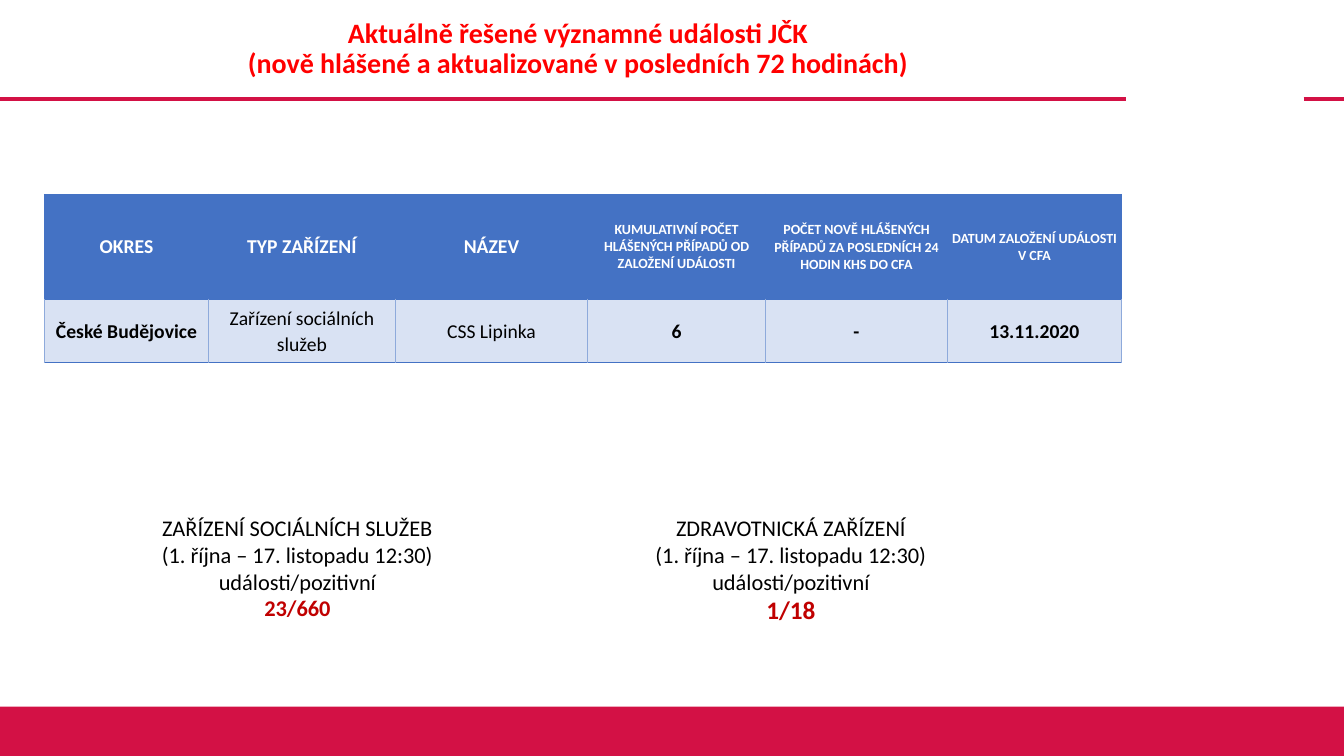
from dataclasses import dataclass

from lxml.etree import SubElement
from pptx import Presentation
from pptx.dml.color import RGBColor
from pptx.enum.shapes import MSO_CONNECTOR, MSO_SHAPE
from pptx.enum.text import MSO_ANCHOR, MSO_AUTO_SIZE, PP_ALIGN
from pptx.oxml.ns import qn
from pptx.util import Inches, Pt


@dataclass(frozen=True)
class Theme:
    font: str = "Calibri"
    crimson: str = "D31145"
    title_red: str = "FF0000"
    count_red: str = "C00000"
    header_blue: str = "4472C4"
    grid_blue: str = "8EAADB"
    row_blue: str = "D9E2F3"
    black: str = "000000"
    white: str = "FFFFFF"
    title_size: int = 20
    count_size: int = 18
    body_size: int = 16
    table_size: int = 14
    small_size: int = 10


def format_text(paragraph, text, *, font, size, color, bold=False, spacing=1.0):
    paragraph.text = text
    paragraph.alignment = PP_ALIGN.CENTER
    paragraph.line_spacing = spacing
    for run in paragraph.runs:
        run.font.name = font
        run.font.size = Pt(size)
        run.font.bold = bold
        run.font.color.rgb = RGBColor.from_string(color)


def set_borders(cell, side_color, edge_color):
    properties = cell._tc.get_or_add_tcPr()
    sides = {"L": side_color, "R": side_color, "T": edge_color, "B": edge_color}
    for side, color in sides.items():
        line = SubElement(properties, qn(f"a:ln{side}"), w=str(Pt(1)))
        fill = SubElement(line, qn("a:solidFill"))
        SubElement(fill, qn("a:srgbClr"), val=color)


class SlideBuilder:
    def __init__(self, slide, theme):
        self.slide = slide
        self.theme = theme

    def text(self, paragraph, text, **options):
        format_text(paragraph, text, font=self.theme.font, **options)

    def rule(self, start, end, top):
        connector = self.slide.shapes.add_connector(
            MSO_CONNECTOR.STRAIGHT, Inches(start), Inches(top), Inches(end), Inches(top))
        connector.line.color.rgb = RGBColor.from_string(self.theme.crimson)
        connector.line.width = Pt(3)
        SubElement(connector._element.spPr, qn("a:effectLst"))

    def band(self, *box):
        shape = self.slide.shapes.add_shape(MSO_SHAPE.RECTANGLE, *map(Inches, box))
        shape.shadow.inherit = False
        shape.fill.solid()
        shape.fill.fore_color.rgb = RGBColor.from_string(self.theme.crimson)
        shape.line.fill.background()

    def title(self, text, *box):
        shape = self.slide.shapes.title
        shape.left, shape.top, shape.width, shape.height = map(Inches, box)
        frame = shape.text_frame
        frame.auto_size = MSO_AUTO_SIZE.NONE
        frame.word_wrap = True
        frame.vertical_anchor = MSO_ANCHOR.MIDDLE
        self.text(frame.paragraphs[0], text, size=self.theme.title_size,
                  color=self.theme.title_red, bold=True, spacing=0.9)

    def cell(self, cell, text, *, fill, side_color, margin, **options):
        cell.vertical_anchor = MSO_ANCHOR.MIDDLE
        cell.margin_left = cell.margin_right = Inches(margin)
        cell.margin_top = cell.margin_bottom = 0
        self.text(cell.text_frame.paragraphs[0], text, **options)
        set_borders(cell, side_color, self.theme.header_blue)
        cell.fill.solid()
        cell.fill.fore_color.rgb = RGBColor.from_string(fill)

    def events_table(self, columns, heights, *box):
        theme = self.theme
        table = self.slide.shapes.add_table(
            len(heights), len(columns), *map(Inches, box)).table
        for row, height in zip(table.rows, heights):
            row.height = Inches(height)
        for index, (width, heading, size, spacing, value, bold) in enumerate(columns):
            table.columns[index].width = Inches(width)
            self.cell(table.cell(0, index), heading, fill=theme.header_blue,
                      side_color=theme.header_blue, margin=0.01, size=size,
                      color=theme.white, bold=True, spacing=spacing)
            self.cell(table.cell(1, index), value, fill=theme.row_blue,
                      side_color=theme.grid_blue, margin=0.07, size=theme.table_size,
                      color=theme.black, bold=bold, spacing=1.07)

    def summary(self, facility, count, count_size, wrap, *box):
        theme = self.theme
        frame = self.slide.shapes.add_textbox(*map(Inches, box)).text_frame
        frame.word_wrap = wrap
        frame.auto_size = MSO_AUTO_SIZE.SHAPE_TO_FIT_TEXT
        lines = (facility, "(1. října – 17. listopadu 12:30)", "události/pozitivní")
        paragraph = frame.paragraphs[0]
        for line in lines:
            self.text(paragraph, line, size=theme.body_size, color=theme.black)
            paragraph = frame.add_paragraph()
        self.text(paragraph, count, size=count_size, color=theme.count_red, bold=True)


def main():
    presentation = Presentation()
    presentation.slide_width = Inches(13.33)
    presentation.slide_height = Inches(7.5)
    slide = presentation.slides.add_slide(presentation.slide_layouts[5])
    theme = Theme()
    builder = SlideBuilder(slide, theme)

    builder.rule(0, 11.17, 0.98)
    builder.rule(12.93, 13.33, 0.98)
    builder.band(0, 7.01, 13.33, 0.49)
    builder.title("Aktuálně řešené významné události JČK \v"
                  "(nově hlášené a aktualizované v posledních 72 hodinách) ",
                  0.36, 0, 10.81, 0.98)

    large, small = theme.table_size, theme.small_size
    columns = [
        (1.63, "OKRES", large, 1.0, "České Budějovice", True),
        (1.85, "TYP ZAŘÍZENÍ", large, 1.0, "Zařízení sociálních služeb", False),
        (1.91, "NÁZEV", large, 1.0, "CSS Lipinka", False),
        (1.76, "KUMULATIVNÍ POČET HLÁŠENÝCH PŘÍPADŮ OD ZALOŽENÍ UDÁLOSTI",
         small, 1.0, "6", True),
        (1.81, "POČET NOVĚ HLÁŠENÝCH PŘÍPADŮ ZA POSLEDNÍCH 24 HODIN KHS DO CFA",
         small, 1.05, "-", True),
        (1.72, "DATUM ZALOŽENÍ UDÁLOSTI V CFA", small, 1.0, "13.11.2020", True),
    ]
    builder.events_table(columns, (1.04, 0.63), 0.44, 1.93, 10.67, 1.67)

    builder.summary("ZAŘÍZENÍ SOCIÁLNÍCH SLUŽEB", "23/660", theme.body_size, False,
                    1.45, 5.05, 3, 1.18)
    builder.summary("ZDRAVOTNICKÁ ZAŘÍZENÍ", "1/18", theme.count_size, True,
                    4.51, 5.05, 6.67, 1.25)
    presentation.save("out.pptx")


if __name__ == "__main__":
    main()
